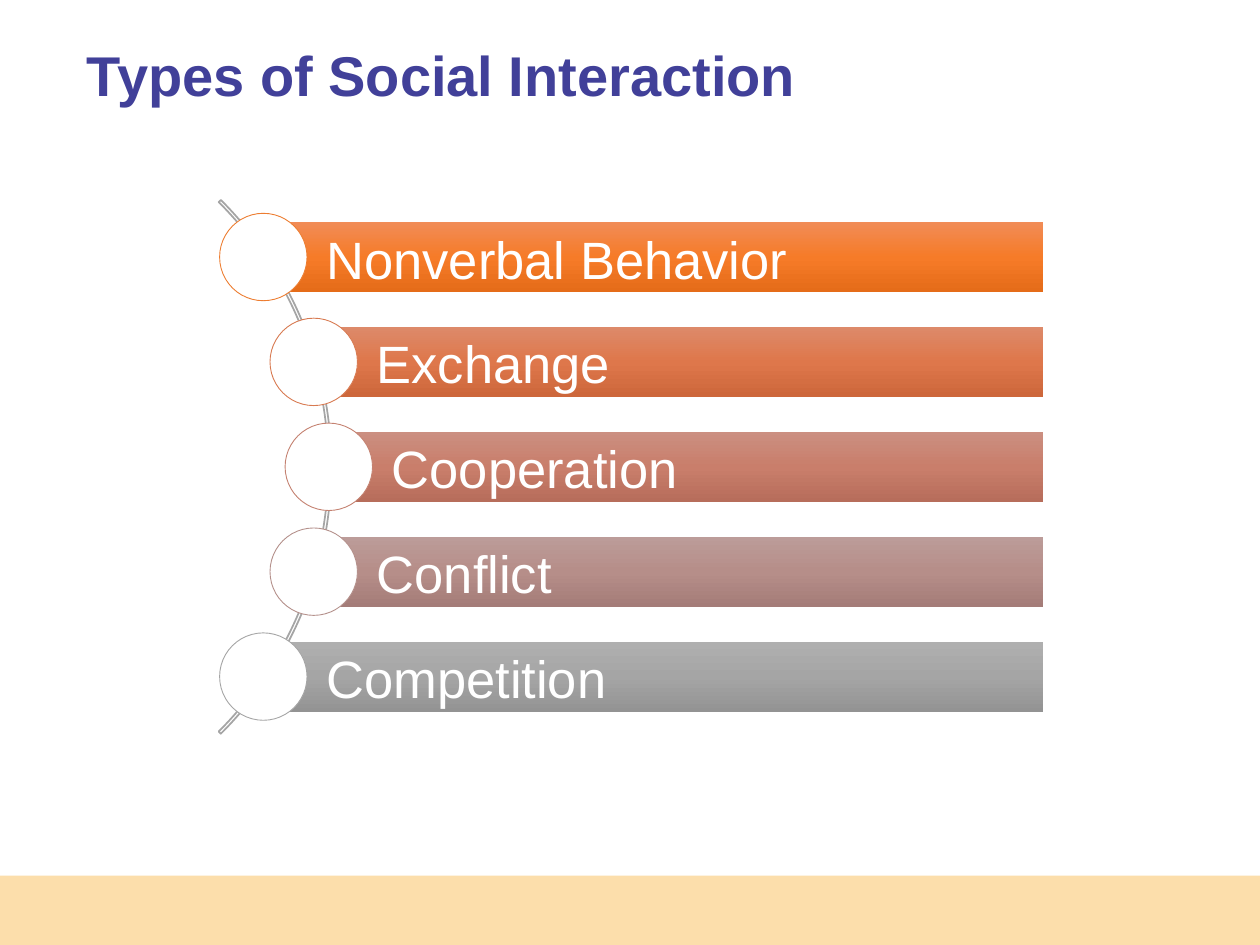
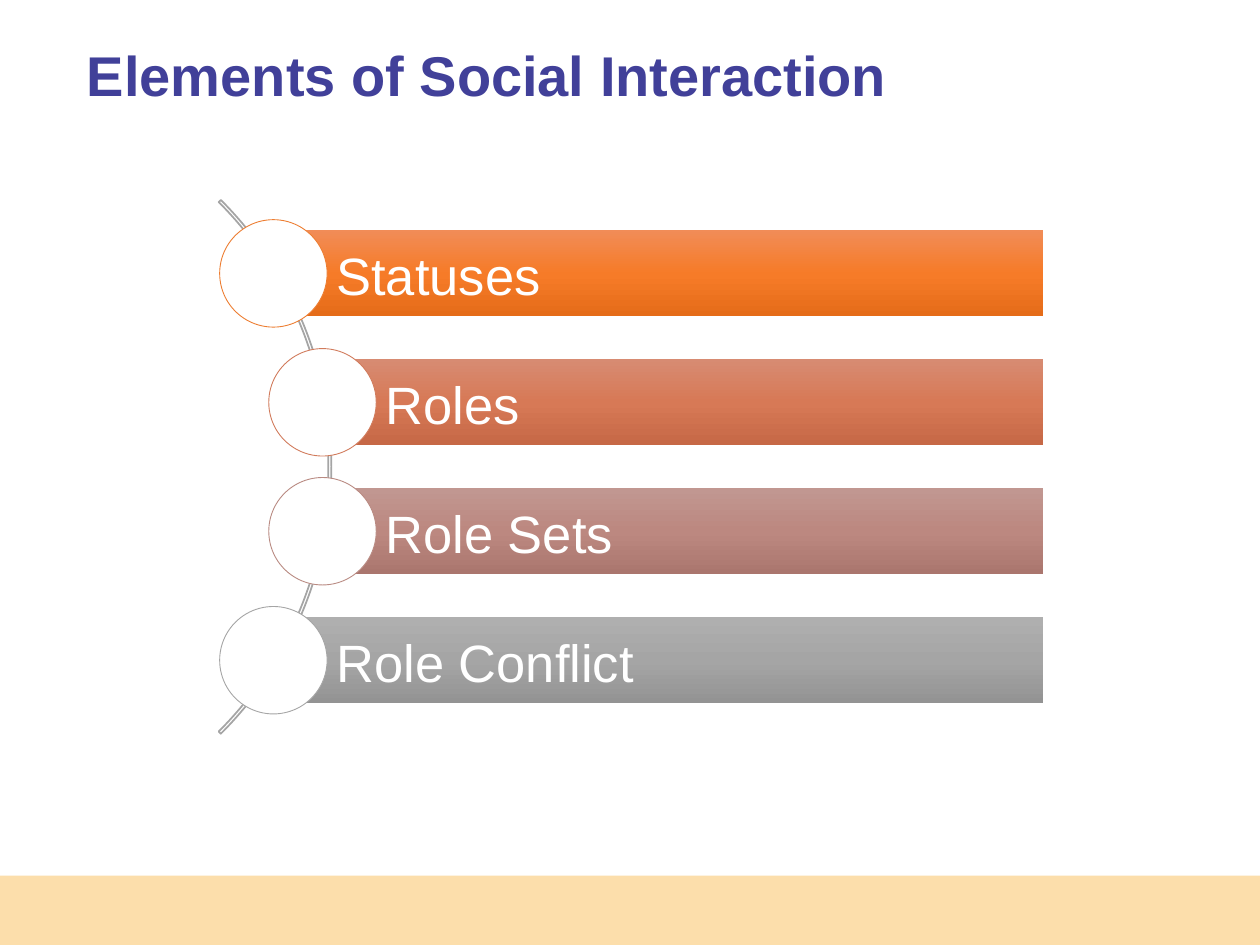
from copy import deepcopy

from pptx import Presentation
from pptx.dml.color import RGBColor
from pptx.enum import shapes, text
from pptx.oxml import ns
from pptx.util import Inches, Pt

WHITE = RGBColor(0xFF, 0xFF, 0xFF)
INDIGO = RGBColor(0x41, 0x40, 0x99)
SAND = RGBColor(0xFC, 0xDE, 0xAB)
GREY = RGBColor(0xA5, 0xA5, 0xA5)
ORANGE = RGBColor(0xED, 0x7D, 0x31)
ORANGE_FADE = [RGBColor(0xF1, 0x8C, 0x57), RGBColor(0xF6, 0x7B, 0x28), RGBColor(0xE5, 0x6C, 0x19)]
GREY_FADE = [RGBColor(0xAF, 0xAF, 0xAF), GREY, RGBColor(0x93, 0x93, 0x93)]
EXCHANGE = RGBColor(0xD8, 0x7A, 0x51)
EXCHANGE_FADE = [RGBColor(0xDD, 0x8A, 0x6A), RGBColor(0xDE, 0x77, 0x4B), RGBColor(0xCD, 0x67, 0x3B)]
COOPERATION = RGBColor(0xC4, 0x81, 0x70)
COOPERATION_FADE = [RGBColor(0xCB, 0x8F, 0x81), RGBColor(0xC9, 0x7E, 0x6B), RGBColor(0xB7, 0x6D, 0x5B)]
CONFLICT = RGBColor(0xB4, 0x90, 0x8B)
CONFLICT_FADE = [RGBColor(0xBC, 0x9C, 0x99), RGBColor(0xB6, 0x8E, 0x89), RGBColor(0xA4, 0x7C, 0x78)]
ROLES = RGBColor(0xD1, 0x7B, 0x5C)
ROLES_FADE = [RGBColor(0xD7, 0x8B, 0x72), RGBColor(0xD7, 0x79, 0x56), RGBColor(0xC6, 0x68, 0x46)]
ROLE_SETS = RGBColor(0xB9, 0x8A, 0x82)
ROLE_SETS_FADE = [RGBColor(0xC1, 0x97, 0x91), RGBColor(0xBC, 0x88, 0x80), RGBColor(0xAA, 0x76, 0x6E)]

BAR_RIGHT = 8.28

# title, first and last row centre, rows of (label, bar left, circle line, bar fade)
TOPICS = [
    ("Types of Social Interaction", 2.04, 5.37, [
        ("Nonverbal Behavior", 2.09, ORANGE, ORANGE_FADE),
        ("Exchange", 2.49, EXCHANGE, EXCHANGE_FADE),
        ("Cooperation", 2.61, COOPERATION, COOPERATION_FADE),
        ("Conflict", 2.49, CONFLICT, CONFLICT_FADE),
        ("Competition", 2.09, GREY, GREY_FADE),
    ]),
    ("Elements of Social Interaction", 2.17, 5.24, [
        ("Statuses", 2.17, ORANGE, ORANGE_FADE),
        ("Roles", 2.56, ROLES, ROLES_FADE),
        ("Role Sets", 2.56, ROLE_SETS, ROLE_SETS_FADE),
        ("Role Conflict", 2.17, GREY, GREY_FADE),
    ]),
]


def write(shape, words, size, color, bold=False, insets=(0, 0, 0, 0)):
    frame = shape.text_frame
    frame.text = words
    frame.word_wrap = True
    frame.auto_size = text.MSO_AUTO_SIZE.NONE
    frame.vertical_anchor = text.MSO_ANCHOR.MIDDLE
    frame.margin_left, frame.margin_top, frame.margin_right, frame.margin_bottom = map(Inches, insets)
    paragraph = frame.paragraphs[0]
    paragraph.alignment = text.PP_ALIGN.LEFT
    paragraph.line_spacing = 0.9
    font = paragraph.runs[0].font
    font.name, font.size, font.bold = "Arial", Pt(size), bold
    font.color.rgb = color


def add_part(slide, kind, left, top, width, height):
    part = slide.shapes.add_shape(kind, Inches(left), Inches(top), Inches(width), Inches(height))
    part.shadow.inherit = False
    part.line.fill.background()
    return part


deck = Presentation()
deck.slide_width, deck.slide_height = Inches(10), Inches(7.5)
layout = deck.slide_layouts[5]
heading = layout.placeholders[0]
heading.left, heading.top = Inches(0.69), Inches(0)
heading.width, heading.height = Inches(8.62), Inches(1.25)

for topic, first_centre, last_centre, rows in TOPICS:
    slide = deck.slides.add_slide(layout)
    write(slide.shapes.title, topic, 32, INDIGO, bold=True)

    arc = add_part(slide, shapes.MSO_SHAPE.BLOCK_ARC, -3.36, 0.71, 5.99, 5.99)
    for position, value in enumerate((189, 27, 0.004)):
        arc.adjustments[position] = value
    arc.fill.background()
    arc.line.color.rgb = GREY
    arc.line.width = Pt(1)

    pitch = (last_centre - first_centre) / (len(rows) - 1)
    bar_height = pitch / 1.5
    diameter = bar_height * 1.25
    for row, (label, left, outline, fade) in enumerate(rows):
        centre = first_centre + row * pitch
        bar = add_part(slide, shapes.MSO_SHAPE.RECTANGLE, left, centre - bar_height / 2,
                       BAR_RIGHT - left, bar_height)
        bar.fill.gradient()
        bar.fill.gradient_angle = 270
        stops = bar.element.spPr.find(".//" + ns.qn("a:gsLst"))
        stops.insert(1, deepcopy(stops[0]))
        for stop, color, position in zip(bar.fill.gradient_stops, fade, (0, 0.5, 1)):
            stop.color.rgb = color
            stop.position = position
        write(bar, label, 30, WHITE, insets=(0.5, 0.08, 0.08, 0))

        circle = add_part(slide, shapes.MSO_SHAPE.OVAL, left - diameter / 2,
                          centre - diameter / 2, diameter, diameter)
        circle.fill.solid()
        circle.fill.fore_color.rgb = WHITE
        circle.line.color.rgb = outline
        circle.line.width = Pt(0.5)

band = add_part(slide, shapes.MSO_SHAPE.RECTANGLE, 0, 6.95, 10, 0.55)
band.fill.solid()
band.fill.fore_color.rgb = SAND
deck.slide_master.shapes.element.insert(2, band.element)

deck.save("out.pptx")
